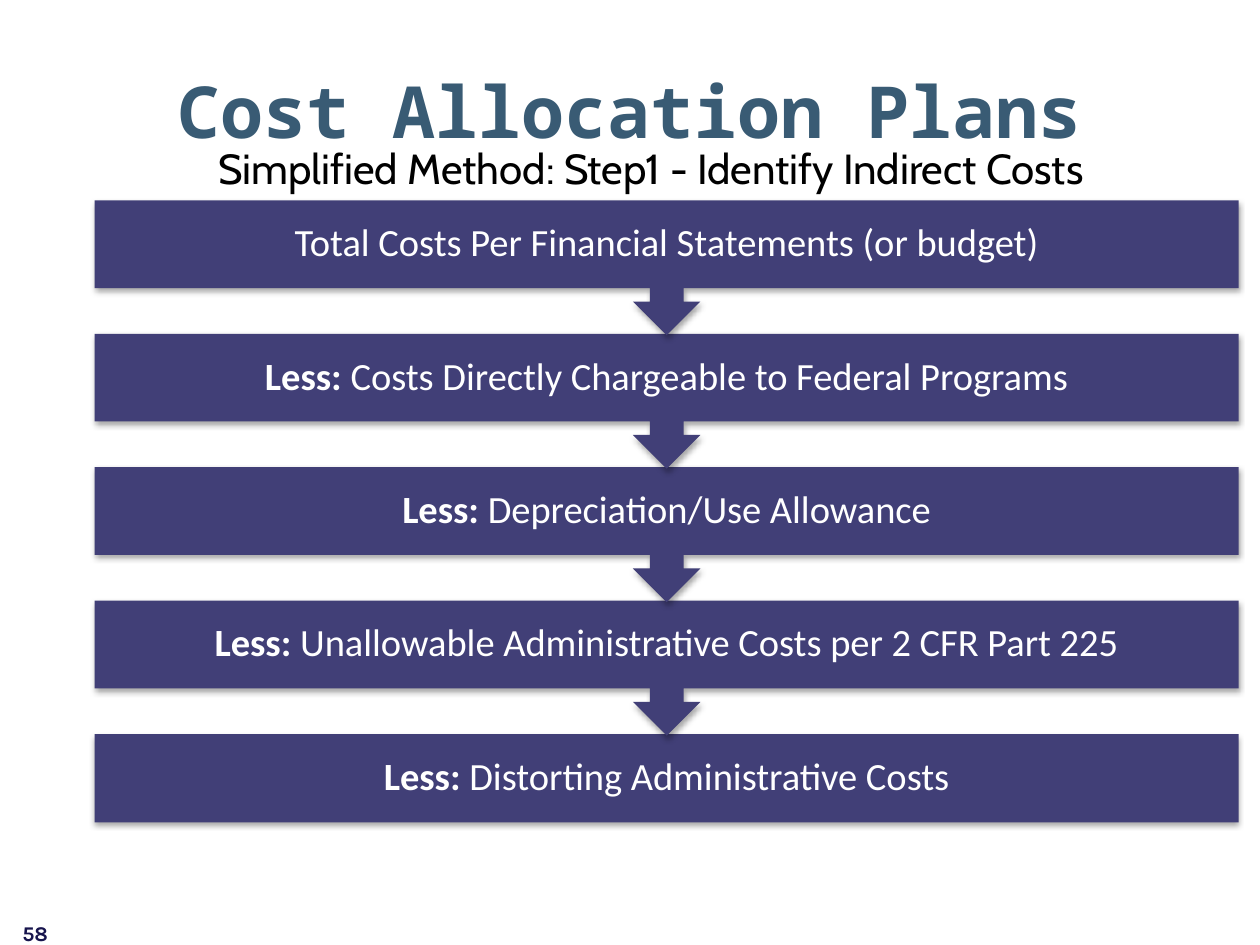
from lxml import etree
from pptx import Presentation
from pptx import util as u
from pptx.dml.color import RGBColor
from pptx.enum import shapes, text
from pptx.oxml import ns

INDIGO = RGBColor(0x41, 0x3F, 0x77)
STEEL = RGBColor(0x39, 0x5B, 0x74)
NAVY = RGBColor(0x17, 0x14, 0x4D)
BLACK = RGBColor(0, 0, 0)
WHITE = RGBColor(0xFF, 0xFF, 0xFF)

STEPS = [
    ("", "Total Costs Per Financial Statements (or budget)"),
    ("Less: ", "Costs Directly Chargeable to Federal Programs"),
    ("Less: ", "Depreciation/Use Allowance"),
    ("Less: ", "Unallowable Administrative Costs per 2 CFR Part 225"),
    ("Less: ", "Distorting Administrative Costs"),
]


def add_run(paragraph, wording, font, size, color, bold=False):
    """Append one formatted run to a paragraph."""
    run = paragraph.add_run()
    run.text = wording
    run.font.name = font
    run.font.size = u.Pt(size)
    run.font.bold = bold
    run.font.color.rgb = color


def place(part, left, top, width, height):
    """Move a part to its box."""
    part.left, part.top, part.width, part.height = left, top, width, height


def add_soft_shadow(step):
    """Give a step a soft shadow straight below it."""
    step.shadow.inherit = False
    effects = step._element.spPr.find(ns.qn("a:effectLst"))
    shadow = etree.SubElement(
        effects, ns.qn("a:outerShdw"), blurRad=str(u.Pt(3.1)),
        dist=str(u.Pt(1.8)), dir="5400000", rotWithShape="0")
    black = etree.SubElement(shadow, ns.qn("a:srgbClr"), val="000000")
    etree.SubElement(black, ns.qn("a:alpha"), val="35000")


def fill_heading(placeholder, box, wording, font, size, color, bold=False):
    """Place a heading placeholder and write its centred line."""
    place(placeholder, *box)
    frame = placeholder.text_frame
    frame.auto_size = text.MSO_AUTO_SIZE.NONE
    frame.vertical_anchor = text.MSO_ANCHOR.TOP
    paragraph = frame.paragraphs[0]
    properties = paragraph._p.get_or_add_pPr()
    properties.set("marL", "0")
    properties.set("indent", "0")
    etree.SubElement(properties, ns.qn("a:buNone"))
    paragraph.alignment = text.PP_ALIGN.CENTER
    paragraph.space_before = u.Pt(0)
    add_run(paragraph, wording, font, size, color, bold)


def add_step(slide, kind, box, lead, item):
    """Draw one step of the chain with its label."""
    step = slide.shapes.add_shape(kind, *box)
    step.fill.solid()
    step.fill.fore_color.rgb = INDIGO
    step.line.fill.background()
    add_soft_shadow(step)
    frame = step.text_frame
    frame.word_wrap = True
    frame.vertical_anchor = text.MSO_ANCHOR.MIDDLE
    frame.margin_left = frame.margin_right = u.Cm(0.43)
    frame.margin_top = frame.margin_bottom = u.Cm(0.43)
    paragraph = frame.paragraphs[0]
    paragraph.alignment = text.PP_ALIGN.CENTER
    paragraph.line_spacing = 0.9
    if lead:
        add_run(paragraph, lead, "Calibri", 22, WHITE, True)
    add_run(paragraph, item, "Calibri", 22, WHITE)


def add_step_chain(slide, left, top, width, pitch):
    """Stack the steps from the bottom up, each pointing to the next."""
    last = len(STEPS) - 1
    for index, (lead, item) in reversed(list(enumerate(STEPS))):
        if index == last:
            kind, height = shapes.MSO_SHAPE.RECTANGLE, u.Cm(1.78)
        else:
            kind, height = shapes.MSO_SHAPE.DOWN_ARROW_CALLOUT, u.Cm(2.72)
        add_step(slide, kind, (left, top + index * pitch, width, height), lead, item)


def add_page_number(slide, left, top, width, height):
    """Write the page number in the lower left corner."""
    page = slide.shapes.add_textbox(left, top, width, height)
    page.text_frame.word_wrap = True
    add_run(page.text_frame.paragraphs[0], "58", "Karla", 12, NAVY, True)


def main():
    """Build and save the slide."""
    deck = Presentation()
    deck.slide_width, deck.slide_height = u.Cm(25.4), u.Cm(19.05)
    slide = deck.slides.add_slide(deck.slide_layouts[1])
    title, subtitle = slide.placeholders
    add_step_chain(slide, u.Cm(1.91), u.Cm(4.04), u.Cm(23.06), u.Cm(2.69))
    fill_heading(subtitle, (u.Cm(1.91), u.Cm(2.74), u.Cm(22.43), u.Cm(1.27)),
                 "Simplified Method: Step1 - Identify Indirect Costs",
                 "Cabin", 24, BLACK)
    fill_heading(title, (u.Cm(1.27), u.Cm(1.22), u.Cm(22.86), u.Cm(2.72)),
                 "Cost Allocation Plans", "Noto Sans Mono", 41, STEEL, True)
    add_page_number(slide, u.Cm(0.2), u.Cm(18.44), u.Cm(5.92), u.Cm(1.02))
    deck.save("out.pptx")


if __name__ == "__main__":
    main()
